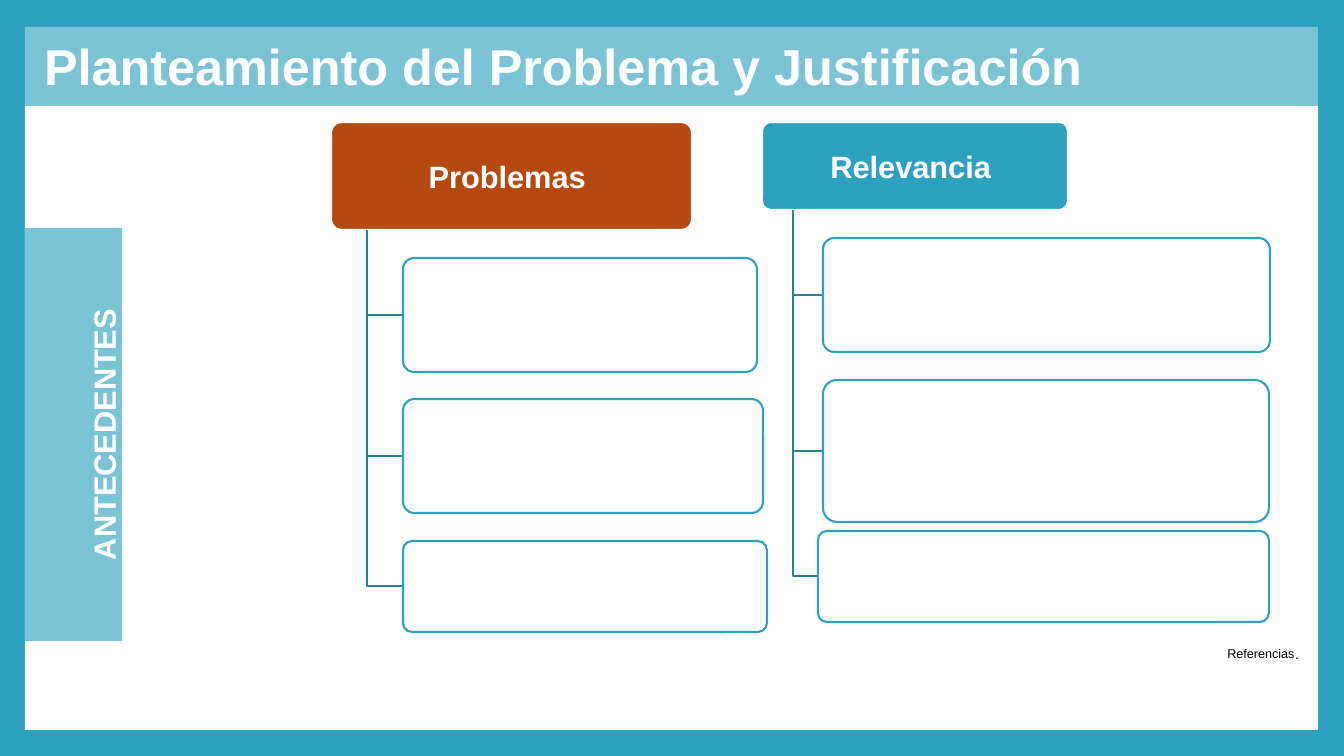
import pptx
import pptx.util
import pptx.dml.color
import pptx.enum.shapes
import pptx.enum.text
import pptx.oxml
import pptx.oxml.ns

RGB = pptx.dml.color.RGBColor
KIND = pptx.enum.shapes.MSO_SHAPE
ALIGN = pptx.enum.text.PP_ALIGN
ANCHOR = pptx.enum.text.MSO_ANCHOR
TEAL = RGB(0x2D, 0xA2, 0xBF)
DARK = RGB(0x24, 0x82, 0x99)
RUST = RGB(0xB5, 0x4A, 0x10)
WHITE = RGB(0xFF, 0xFF, 0xFF)
BLACK = RGB(0, 0, 0)
SCALE = 914400 / 100.8


def px(num):
    """Turn px into EMU."""
    return round(num * SCALE)


def write(shape, text, size=22, color=WHITE, bold=True, align=ALIGN.CENTER,
          anchor=ANCHOR.MIDDLE, pad=(5, 3, 5, 3)):
    """Put formatted text in a shape."""
    frame = shape.text_frame
    frame.word_wrap = True
    frame.vertical_anchor = anchor
    (frame.margin_left, frame.margin_top,
     frame.margin_right, frame.margin_bottom) = map(px, pad)
    para = frame.paragraphs[0]
    para.alignment = align
    run = para.add_run()
    run.text = text
    font = run.font
    font.name, font.size, font.bold = "Arial", pptx.util.Pt(size), bold
    font.color.rgb = color


def block(slide, box, fill, alpha=100, line=None, kind=KIND.RECTANGLE):
    """Add a filled shape with an optional outline."""
    shape = slide.shapes.add_shape(kind, *map(px, box))
    shape.shadow.inherit = False
    if kind == KIND.ROUNDED_RECTANGLE:
        shape.adjustments[0] = 0.1
    shape.fill.solid()
    shape.fill.fore_color.rgb = fill
    if alpha < 100:
        tone = shape.fill._xPr.find(".//" + pptx.oxml.ns.qn("a:srgbClr"))
        tone.append(pptx.oxml.parse_xml(
            f'<a:alpha {pptx.oxml.ns.nsdecls("a")} val="{alpha * 1000}"/>'))
    if line is None:
        shape.line.fill.background()
    else:
        shape.line.color.rgb = line
        shape.line.width = pptx.util.Pt(1.5)
    return shape


def branch(slide, stem, top, edge, mid):
    """Draw an elbow from a heading to a card."""
    form = slide.shapes.build_freeform(stem, top, scale=SCALE)
    form.add_line_segments([(stem, mid), (edge, mid)], close=False)
    shape = form.convert_to_shape()
    shape.shadow.inherit = False
    shape.fill.background()
    shape.line.color.rgb = DARK
    shape.line.width = pptx.util.Pt(1.5)


def tree(slide, box, text, fill, cards):
    """Draw a heading with its branches and cards."""
    left, top, width, height = box
    head = block(slide, box, fill, line=WHITE, kind=KIND.ROUNDED_RECTANGLE)
    write(head, text)
    stem = left + round(width / 10)
    for dx, dy, wide, high in cards:
        card = (left + dx, top + dy, wide, high)
        branch(slide, stem, top + height, card[0], card[1] + high // 2)
        block(slide, card, WHITE, alpha=90, line=TEAL,
              kind=KIND.ROUNDED_RECTANGLE)


def banner(slide, box):
    """Draw the title band."""
    band = block(slide, box, TEAL, alpha=63)
    write(band, "Planteamiento del Problema y Justificación", size=36,
          align=ALIGN.LEFT, pad=(44, 5, 10, 5))


def side(slide, box):
    """Draw the upright label band."""
    band = block(slide, box, TEAL, alpha=63)
    write(band, "ANTECEDENTES", anchor=ANCHOR.BOTTOM, pad=(0, 0, 0, 0))
    band.text_frame._txBody.bodyPr.set("vert", "vert270")


def note(slide, box, text, size):
    """Add a small right-aligned note."""
    shape = slide.shapes.add_textbox(*map(px, box))
    write(shape, text, size=size, color=BLACK, bold=False,
          align=ALIGN.RIGHT, anchor=ANCHOR.TOP, pad=(10, 5, 10, 5))
    shape.text_frame.auto_size = pptx.enum.text.MSO_AUTO_SIZE.SHAPE_TO_FIT_TEXT


def main():
    """Build and save the slide."""
    deck = pptx.Presentation()
    deck.slide_width, deck.slide_height = px(1344), px(756)
    slide = deck.slides.add_slide(deck.slide_layouts[6])
    slide.background.fill.solid()
    slide.background.fill.fore_color.rgb = TEAL
    block(slide, (25, 27, 1293, 703), WHITE)
    tree(slide, (331, 122, 361, 108), "Problemas ", RUST,
         [(72, 136, 354, 114), (72, 277, 360, 114), (72, 419, 364, 91)])
    tree(slide, (762, 122, 306, 88), "Relevancia ", TEAL,
         [(61, 116, 447, 114), (61, 258, 446, 142), (56, 409, 451, 91)])
    note(slide, (42, 641, 1267, 27), ".", 10)
    banner(slide, (0, 25, 1344, 81))
    side(slide, (25, 228, 97, 413))
    note(slide, (25, 641, 1283, 25), "Referencias ", 9)
    deck.save("out.pptx")


if __name__ == "__main__":
    main()
